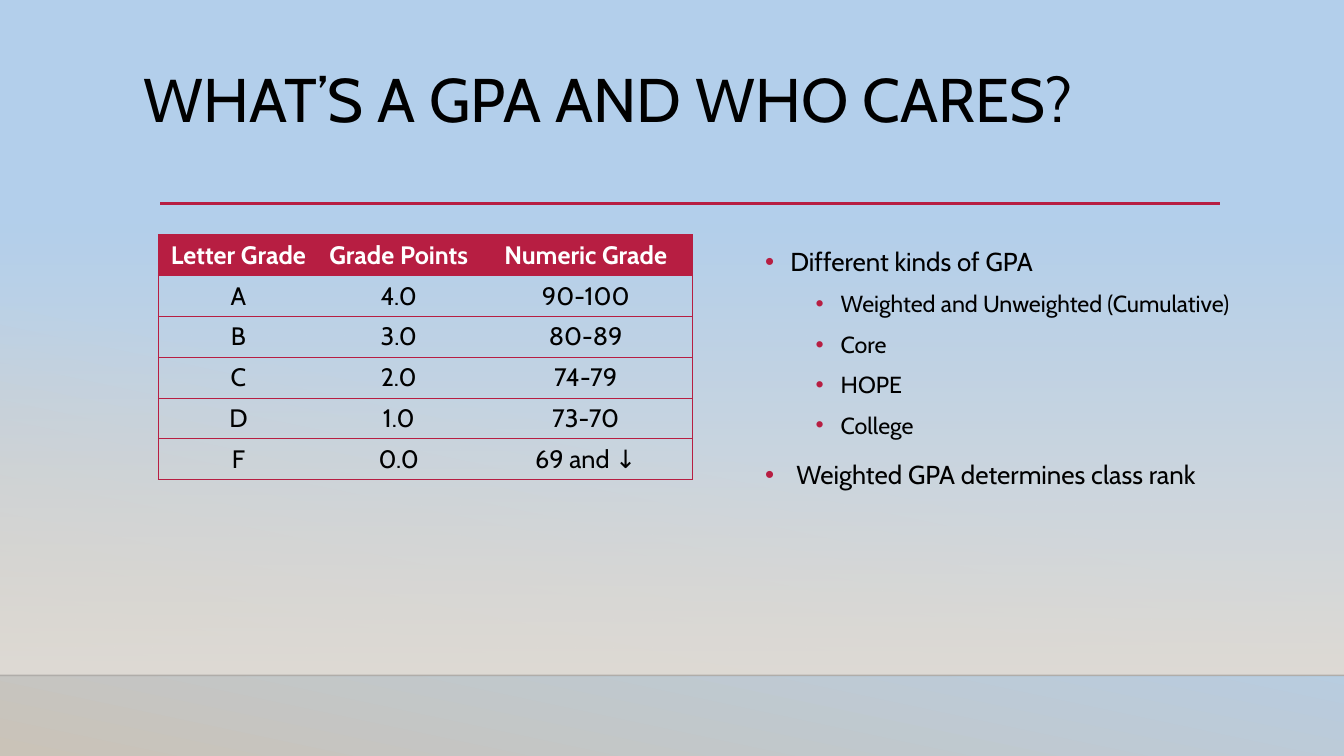
from lxml.etree import SubElement
from pptx import Presentation
from pptx.dml.color import RGBColor
from pptx.enum.shapes import MSO_CONNECTOR as CONNECTOR, MSO_SHAPE as SHAPE
from pptx.enum.text import MSO_ANCHOR as ANCHOR, PP_ALIGN as ALIGN
from pptx.oxml.ns import qn
from pptx.util import Inches, Pt

WIDTH, HEIGHT = 13.33, 7.5
FONT = "Cabin"
BLACK = RGBColor(0x00, 0x00, 0x00)
WHITE = RGBColor(0xFF, 0xFF, 0xFF)
CRIMSON = RGBColor(0xB7, 0x1E, 0x42)
SKY = RGBColor(0xB3, 0xCF, 0xEB)
SAND = RGBColor(0xCA, 0xC3, 0xB8)
HAZE = RGBColor(0xDF, 0xDB, 0xD5)
HORIZON_INK = RGBColor(0x00, 0x00, 0x01)

TITLE = "WHAT’S A GPA AND WHO CARES?"
GRADES = [
    ("Letter Grade", "Grade Points", "Numeric Grade"),
    ("A", "4.0", "90-100"),
    ("B", "3.0", "80-89"),
    ("C", "2.0", "74-79"),
    ("D", "1.0", "73-70"),
    ("F", "0.0", "69 and ↓"),
]
COLUMN_SHARES = (0.3, 0.3, 0.4)
MAIN, SUB = (18.5, 10, 0.25, 0.25), (16.6, 5, 0.75, 0.25)
MAIN_WIDE = (18.5, 10, 0.31, 0.31)
POINTS = [
    ("Different kinds of GPA", MAIN),
    ("Weighted and Unweighted (Cumulative)", SUB),
    ("Core", SUB),
    ("HOPE", SUB),
    ("College", SUB),
    ("Weighted GPA determines class rank", MAIN_WIDE),
]


def inches(box):
    """Turn a box of plain numbers into lengths."""
    return [Inches(value) for value in box]


def set_alpha(color_parent, percent):
    """Set the opacity of the colour found below an element."""
    color = next(color_parent.iter(qn("a:srgbClr")))
    SubElement(color, qn("a:alpha"), val=str(percent * 1000))


def set_gradient(fill, stops, clockwise_angle):
    """Fill with a linear gradient of two stops."""
    fill.gradient()
    fill.gradient_angle = 360 - clockwise_angle
    for stop, (position, color) in zip(fill.gradient_stops, stops):
        stop.position = position
        stop.color.rgb = color


def style_text(paragraph, size, color, bold=False):
    """Format every run of a paragraph."""
    for run in paragraph.runs:
        run.font.name = FONT
        run.font.size = Pt(size)
        run.font.bold = bold
        run.font.color.rgb = color


def add_rule(slide, left, right, top, color, width):
    """Draw a level line and return it."""
    line = slide.shapes.add_connector(
        CONNECTOR.STRAIGHT, *inches((left, top, right, top)))
    line.line.color.rgb = color
    line.line.width = Pt(width)
    SubElement(line._element.spPr, qn("a:effectLst"))
    return line


def add_text_frame(slide, box):
    """Add a wrapping text box and return its frame."""
    text_frame = slide.shapes.add_textbox(*inches(box)).text_frame
    text_frame.word_wrap = True
    text_frame.vertical_anchor = ANCHOR.TOP
    return text_frame


def add_backdrop(slide, box):
    """Paint the sky, the haze in the box and the horizon below it."""
    left, top, width, height = box
    set_gradient(slide.background.fill, [(0.55, SKY), (1, SAND)], 102)
    haze = slide.shapes.add_shape(SHAPE.RECTANGLE, *inches(box))
    haze.shadow.inherit = False
    haze.line.fill.background()
    set_gradient(haze.fill, [(0, HAZE), (1, HAZE)], 90)
    set_alpha(haze._element.spPr, 0)
    horizon = add_rule(slide, left, left + width, top + height, HORIZON_INK, 1)
    set_alpha(horizon._element.spPr, 20)


def add_title(slide, box):
    """Write the heading in its box."""
    paragraph = add_text_frame(slide, box).paragraphs[0]
    paragraph.text = TITLE
    paragraph.line_spacing = 0.9
    style_text(paragraph, 44, BLACK)


def set_borders(cell, sides):
    """Draw the named sides of a cell and clear the others."""
    properties = cell._tc.get_or_add_tcPr()
    for side in "LRTB":
        line = SubElement(properties, qn(f"a:ln{side}"), w=str(Pt(0.75)))
        if side in sides:
            fill = SubElement(line, qn("a:solidFill"))
            SubElement(fill, qn("a:srgbClr"), val=str(CRIMSON))
        else:
            SubElement(line, qn("a:noFill"))


def add_grade_table(slide, box):
    """Fill the box with the table of grades."""
    left, top, width, height = box
    last = len(COLUMN_SHARES) - 1
    table = slide.shapes.add_table(
        len(GRADES), len(COLUMN_SHARES), *inches(box)).table
    for column, share in zip(table.columns, COLUMN_SHARES):
        column.width = Inches(width * share)
    for row_index, row in enumerate(GRADES):
        table.rows[row_index].height = Inches(height / len(GRADES))
        header = row_index == 0
        for column_index, text in enumerate(row):
            cell = table.cell(row_index, column_index)
            cell.text = text
            paragraph = cell.text_frame.paragraphs[0]
            paragraph.alignment = ALIGN.CENTER
            style_text(paragraph, 18, WHITE if header else BLACK, header)
            outer = {0: "L", last: "R"}.get(column_index, "")
            set_borders(cell, "TB" + outer)
            if header:
                cell.fill.solid()
                cell.fill.fore_color.rgb = CRIMSON
            else:
                cell.fill.background()


def add_bullet(paragraph, margin, hang):
    """Give a paragraph a crimson bullet with a hanging indent."""
    properties = paragraph._p.get_or_add_pPr()
    properties.set("marL", str(Inches(margin)))
    properties.set("indent", str(-Inches(hang)))
    color = SubElement(properties, qn("a:buClr"))
    SubElement(color, qn("a:srgbClr"), val=str(CRIMSON))
    SubElement(properties, qn("a:buFont"), typeface="Arial")
    SubElement(properties, qn("a:buChar"), char="•")


def add_points(slide, box):
    """List the points on two levels in the box."""
    text_frame = add_text_frame(slide, box)
    for index, (text, (size, space, margin, hang)) in enumerate(POINTS):
        paragraph = text_frame.add_paragraph() if index else text_frame.paragraphs[0]
        paragraph.text = text
        add_bullet(paragraph, margin, hang)
        paragraph.line_spacing = 1.2
        if index:
            paragraph.space_before = Pt(space)
        style_text(paragraph, size, BLACK)


def main():
    """Build the slide and save it."""
    presentation = Presentation()
    presentation.slide_width, presentation.slide_height = inches((WIDTH, HEIGHT))
    slide = presentation.slides.add_slide(presentation.slide_layouts[6])
    add_backdrop(slide, (0, 2.21, WIDTH, 4.49))
    add_rule(slide, 1.59, 12.1, 2.02, CRIMSON, 2.5)
    add_title(slide, (1.33, 0.64, 11.5, 1.45))
    add_grade_table(slide, (1.57, 2.33, 5.3, 2.43))
    add_points(slide, (7.49, 2.33, 5.01, 2.68))
    presentation.save("out.pptx")


if __name__ == "__main__":
    main()
